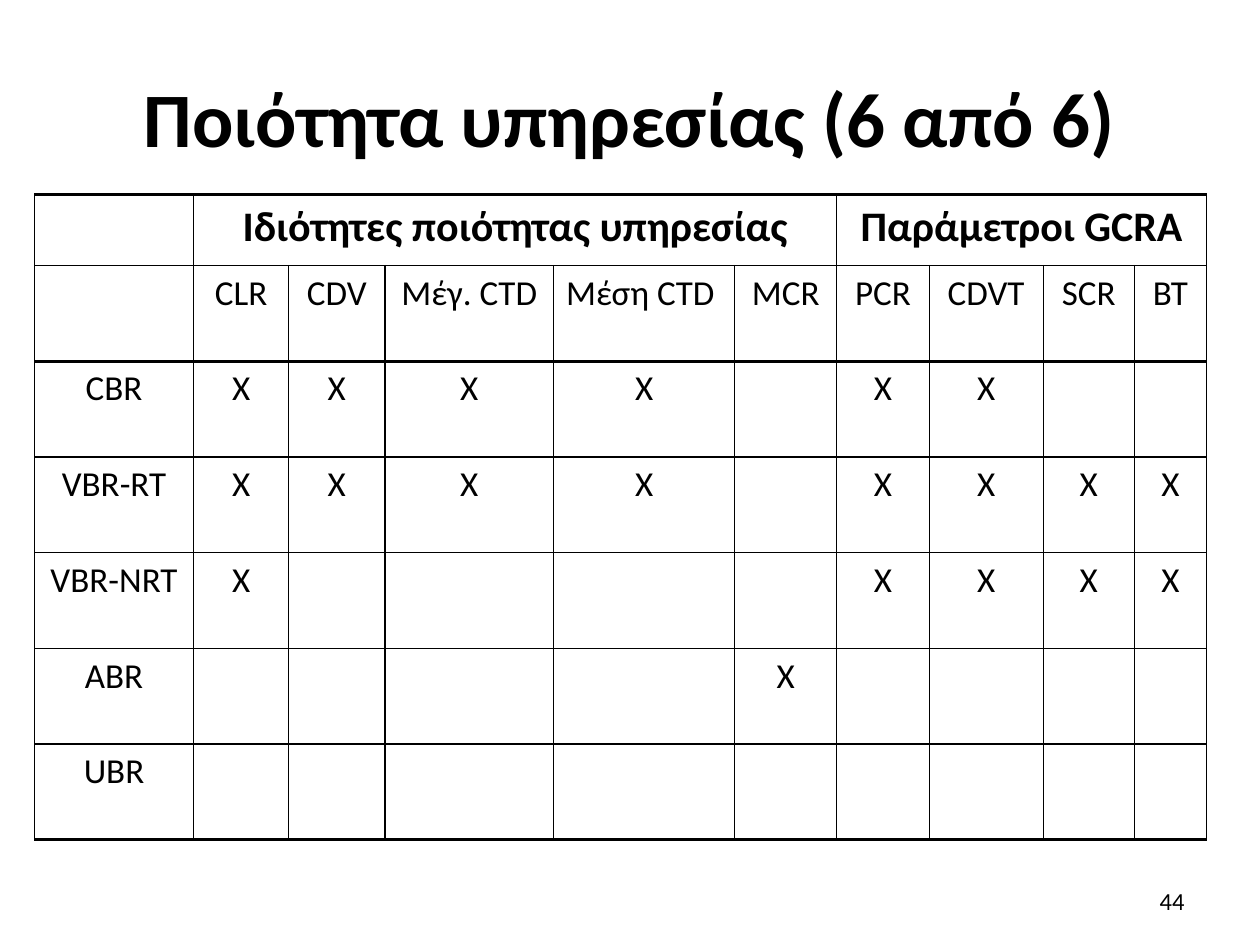
from lxml import etree
from pptx import Presentation
from pptx.dml.color import RGBColor
from pptx.enum.text import MSO_ANCHOR, PP_ALIGN
from pptx.oxml.ns import qn
from pptx.util import Cm, Pt

LEFT, CENTER, RIGHT = PP_ALIGN.LEFT, PP_ALIGN.CENTER, PP_ALIGN.RIGHT
MIDDLE = MSO_ANCHOR.MIDDLE
BLACK = "000000"
FONT = "Calibri"
THIN, RULE, THICK = 0.75, 1, 2

COL_WIDTHS = [3.2, 1.92, 1.94, 3.4, 3.65, 2.06, 1.86, 2.3, 1.84, 1.45]
HEADER_HEIGHT, ROW_HEIGHT = 1.42, 1.93
GROUPS = [(1, 5, "Ιδιότητες ποιότητας υπηρεσίας"), (6, 9, "Παράμετροι GCRA")]
COLUMNS = ["CLR", "CDV", "Μέγ. CTD", "Μέση CTD", "MCR", "PCR", "CDVT", "SCR", "BT"]
SERVICES = {
    "CBR": ["CLR", "CDV", "Μέγ. CTD", "Μέση CTD", "PCR", "CDVT"],
    "VBR-RT": ["CLR", "CDV", "Μέγ. CTD", "Μέση CTD", "PCR", "CDVT", "SCR", "BT"],
    "VBR-NRT": ["CLR", "PCR", "CDVT", "SCR", "BT"],
    "ABR": ["MCR"],
    "UBR": [],
}
ROW_RULES = [THICK, THIN, THICK, RULE, RULE, RULE, RULE, THICK]


def color(hex_string):
    return RGBColor.from_string(hex_string)


def write(tf, text, size, align=CENTER, bold=False):
    p = tf.paragraphs[0]
    p.text = text
    p.alignment = align
    p.font.name = FONT
    p.font.size = Pt(size)
    p.font.bold = bold
    p.font.color.rgb = color(BLACK)


def set_borders(cell, top, bottom):
    tcPr = cell._tc.get_or_add_tcPr()
    sides = [("a:lnL", THIN), ("a:lnR", THIN), ("a:lnT", top), ("a:lnB", bottom)]
    for i, (tag, width) in enumerate(sides):
        ln = etree.Element(qn(tag), w=str(Pt(width)))
        fill = etree.SubElement(ln, qn("a:solidFill"))
        etree.SubElement(fill, qn("a:srgbClr"), val=BLACK)
        tcPr.insert(i, ln)


def add_title(s, left, top, width, height):
    sp = s.shapes.title
    sp.left, sp.top, sp.width, sp.height = Cm(left), Cm(top), Cm(width), Cm(height)
    sp.text_frame.vertical_anchor = MIDDLE
    write(sp.text_frame, "Ποιότητα υπηρεσίας (6 από 6)", 44, bold=True)


def add_service_table(s, left, top):
    heights = [HEADER_HEIGHT] + [ROW_HEIGHT] * (len(SERVICES) + 1)
    table = s.shapes.add_table(len(heights), len(COL_WIDTHS), Cm(left), Cm(top),
                               Cm(sum(COL_WIDTHS)), Cm(sum(heights))).table
    table.first_row = table.horz_banding = False
    for column, width in zip(table.columns, COL_WIDTHS):
        column.width = Cm(width)
    for r, height in enumerate(heights):
        table.rows[r].height = Cm(height)
        for c in range(len(COL_WIDTHS)):
            cell = table.cell(r, c)
            cell.fill.background()
            set_borders(cell, ROW_RULES[r], ROW_RULES[r + 1])

    for first, last, text in GROUPS:
        table.cell(0, first).merge(table.cell(0, last))
        write(table.cell(0, first).text_frame, text, 24, bold=True)
    for c, name in enumerate(COLUMNS, 1):
        align = LEFT if name == "Μέση CTD" else CENTER
        write(table.cell(1, c).text_frame, name, 20, align)
    for r, (service, marked) in enumerate(SERVICES.items(), 2):
        write(table.cell(r, 0).text_frame, service, 20)
        for name in marked:
            write(table.cell(r, COLUMNS.index(name) + 1).text_frame, "X", 20)


def add_page_number(s, left, top, width, height):
    tf = s.shapes.add_textbox(Cm(left), Cm(top), Cm(width), Cm(height)).text_frame
    tf.word_wrap = True
    tf.vertical_anchor = MIDDLE
    write(tf, "44", 14, RIGHT)


def main():
    prs = Presentation()
    prs.slide_width, prs.slide_height = Cm(25.4), Cm(19.05)
    s = prs.slides.add_slide(prs.slide_layouts[5])
    add_title(s, 1.27, 0.76, 22.86, 3.18)
    add_service_table(s, 0.7, 3.93)
    add_page_number(s, 18.2, 17.66, 5.93, 1.01)
    prs.save("out.pptx")


if __name__ == "__main__":
    main()
